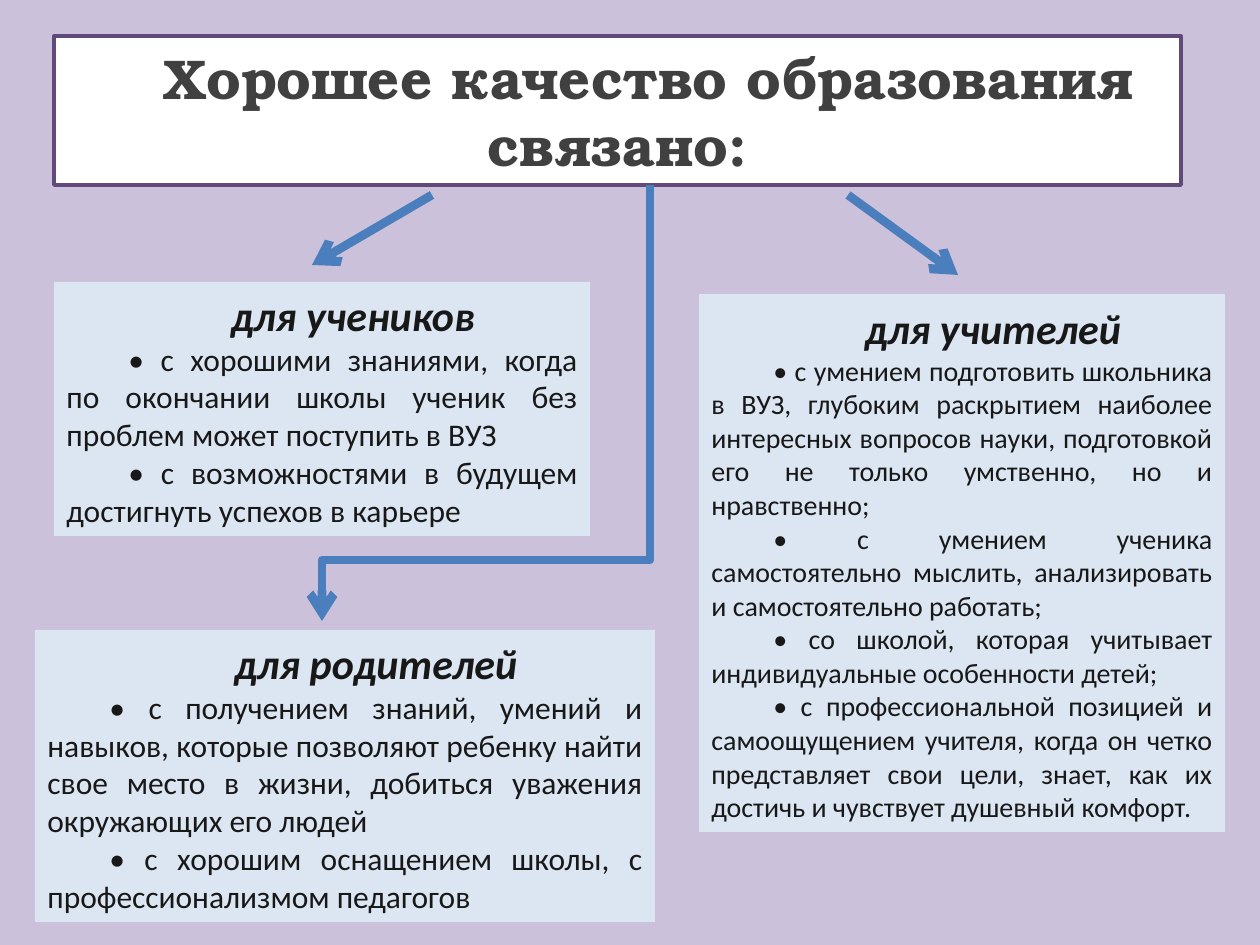
from dataclasses import dataclass

from lxml import etree
from pptx import Presentation
from pptx.dml.color import RGBColor
from pptx.enum.shapes import MSO_CONNECTOR, MSO_SHAPE
from pptx.enum.text import MSO_ANCHOR, MSO_AUTO_SIZE, PP_ALIGN
from pptx.oxml.ns import qn
from pptx.util import Pt

RECT = MSO_SHAPE.RECTANGLE
STRAIGHT, ELBOW = MSO_CONNECTOR.STRAIGHT, MSO_CONNECTOR.ELBOW
MIDDLE = MSO_ANCHOR.MIDDLE
GROW = MSO_AUTO_SIZE.SHAPE_TO_FIT_TEXT
CENTER, JUSTIFY = PP_ALIGN.CENTER, PP_ALIGN.JUSTIFY
PX_PER_INCH = 126
FIRST_LINE = 62


@dataclass(frozen=True)
class Theme:
    background: str = "CCC1DA"
    title_fill: str = "FFFFFF"
    title_line: str = "604A7B"
    title_text: str = "404040"
    panel_fill: str = "DCE6F2"
    panel_text: str = "181818"
    arrow: str = "4B7EBC"
    title_font: str = "TeX Gyre Bonum"
    body_font: str = "Calibri"
    title_size: int = 32
    heading_size: int = 24
    title_border: float = 2.25
    arrow_width: int = 5


THEME = Theme()
TITLE = "Хорошее качество образования связано:"

# box, body size, heading, points
PANELS = [
    ((54, 282, 536, 254), 18, "для учеников", [
        "с хорошими знаниями, когда по окончании школы ученик без проблем "
        "может поступить в ВУЗ",
        "с возможностями в будущем достигнуть успехов в карьере",
    ]),
    ((35, 630, 620, 292), 18, "для родителей", [
        "с получением знаний, умений и навыков, которые позволяют ребенку "
        "найти свое место в жизни, добиться уважения окружающих его людей",
        "с хорошим оснащением школы, с профессионализмом педагогов",
    ]),
    ((699, 294, 526, 538), 16, "для учителей", [
        "с умением подготовить школьника в ВУЗ, глубоким раскрытием наиболее "
        "интересных вопросов науки, подготовкой его не только умственно, но и "
        "нравственно;",
        "с умением ученика самостоятельно мыслить, анализировать и "
        "самостоятельно работать;",
        "со школой, которая учитывает индивидуальные особенности детей;",
        "с профессиональной позицией и самоощущением учителя, когда он четко "
        "представляет свои цели, знает, как их достичь и чувствует душевный "
        "комфорт.",
    ]),
]


def px(n):
    return round(n * 914400 / PX_PER_INCH)


def rgb(color):
    return RGBColor.from_string(color)


def add_box(slide, box, fill):
    sp = slide.shapes.add_shape(RECT, *map(px, box))
    sp.shadow.inherit = False
    sp.fill.solid()
    sp.fill.fore_color.rgb = rgb(fill)
    sp.line.fill.background()
    tf = sp.text_frame
    tf.word_wrap = True
    tf.vertical_anchor = MIDDLE
    tf.auto_size = GROW
    return sp


def format_paragraph(p, align, font, size, color, bold=False, italic=False):
    p.alignment = align
    pPr = p._p.get_or_add_pPr()
    pPr.set("marL", "0")
    pPr.set("indent", str(px(FIRST_LINE)))
    for r in p.runs:
        r.font.name = font
        r.font.size = Pt(size)
        r.font.color.rgb = rgb(color)
        r.font.bold = bold
        r.font.italic = italic


def add_title(slide, box):
    sp = add_box(slide, box, THEME.title_fill)
    sp.line.color.rgb = rgb(THEME.title_line)
    sp.line.width = Pt(THEME.title_border)
    p = sp.text_frame.paragraphs[0]
    p.text = TITLE
    format_paragraph(p, CENTER, THEME.title_font, THEME.title_size,
                     THEME.title_text, bold=True)


def add_panel(slide, box, size, heading, points):
    tf = add_box(slide, box, THEME.panel_fill).text_frame
    tf.text = "\n".join([heading] + [f"• {point}" for point in points])
    head, *body = tf.paragraphs
    format_paragraph(head, CENTER, THEME.body_font, THEME.heading_size,
                     THEME.panel_text, bold=True, italic=True)
    for p in body:
        format_paragraph(p, JUSTIFY, THEME.body_font, size, THEME.panel_text)


def add_arrow(slide, kind, start, end):
    c = slide.shapes.add_connector(kind, *map(px, start + end))
    c.line.color.rgb = rgb(THEME.arrow)
    c.line.width = Pt(THEME.arrow_width)
    etree.SubElement(c.line._get_or_add_ln(), qn("a:tailEnd"), type="arrow")
    etree.SubElement(c._element.spPr, qn("a:effectLst"))
    return c


def add_down_elbow(slide, start, end, bend):
    """Arrow going down, left and down again; bend is the share of the first drop."""
    (x1, y1), (x2, y2) = start, end
    cx, cy = (x1 + x2) / 2, (y1 + y2) / 2
    half_w, half_h = (y2 - y1) / 2, (x1 - x2) / 2
    c = add_arrow(slide, ELBOW, (cx - half_w, cy - half_h),
                  (cx + half_w, cy + half_h))
    spPr = c._element.spPr
    spPr.find(qn("a:xfrm")).set("rot", str(90 * 60000))
    guides = spPr.find(qn("a:prstGeom")).find(qn("a:avLst"))
    etree.SubElement(guides, qn("a:gd"), name="adj1",
                     fmla=f"val {round(bend * 100000)}")


def main():
    prs = Presentation()
    prs.slide_width, prs.slide_height = px(1260), px(945)
    slide = prs.slides.add_slide(prs.slide_layouts[6])
    slide.background.fill.solid()
    slide.background.fill.fore_color.rgb = rgb(THEME.background)

    add_title(slide, (54, 36, 1127, 149))
    for panel in PANELS:
        add_panel(slide, *panel)
    add_arrow(slide, STRAIGHT, (432, 195), (312, 265))
    add_arrow(slide, STRAIGHT, (848, 195), (958, 275))
    add_down_elbow(slide, (650, 185), (322, 621), bend=0.86)
    prs.save("out.pptx")


if __name__ == "__main__":
    main()
